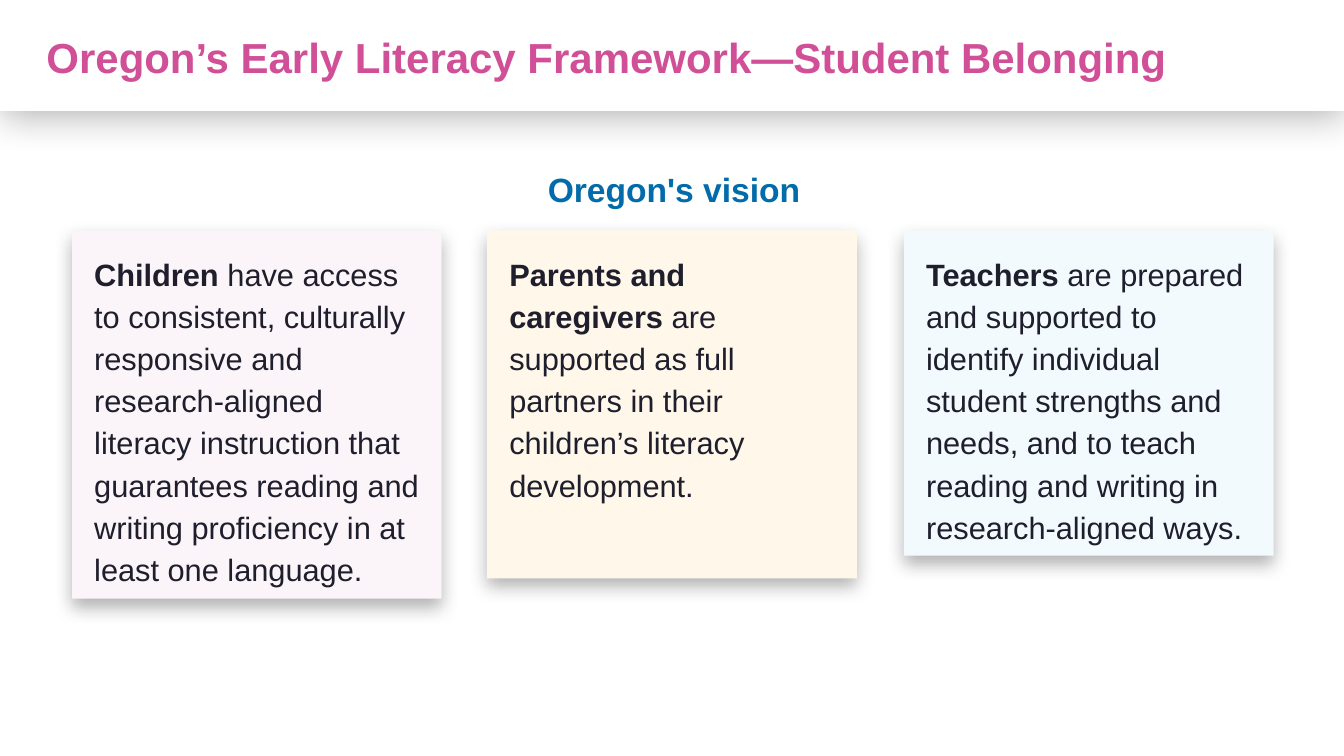
from lxml import etree
from pptx import Presentation
from pptx.dml.color import RGBColor
from pptx.enum.shapes import MSO_SHAPE as Shape
from pptx.enum.text import MSO_ANCHOR as Anchor, PP_ALIGN as Align
from pptx.oxml.ns import qn
from pptx.util import Pt

WHITE = RGBColor(0xFF, 0xFF, 0xFF)
PINK = RGBColor(0xD1, 0x4F, 0x97)
BLUE = RGBColor(0x02, 0x6C, 0xAA)
INK = RGBColor(0x1E, 0x1E, 0x2D)
PALE_PINK = RGBColor(0xFB, 0xF4, 0xF8)
PALE_YELLOW = RGBColor(0xFE, 0xF7, 0xEA)
PALE_BLUE = RGBColor(0xF3, 0xFA, 0xFE)

INSET = 14.4
LINE_SPACING = 1.14


def add_panel(left, top, width, height, fill, blur, distance):
    """Add a borderless rectangle with a soft shadow below it."""
    panel = slide.shapes.add_shape(
        Shape.RECTANGLE, Pt(left), Pt(top), Pt(width), Pt(height))
    panel.fill.solid()
    panel.fill.fore_color.rgb = fill
    panel.line.fill.background()
    panel.shadow.inherit = False
    effects = panel._element.spPr.find(qn("a:effectLst"))
    shadow = etree.SubElement(
        effects, qn("a:outerShdw"), blurRad=str(Pt(blur)), dist=str(Pt(distance)),
        dir="5400000", algn="t", rotWithShape="0")
    color = etree.SubElement(shadow, qn("a:srgbClr"), val="000000")
    etree.SubElement(color, qn("a:alpha"), val="30000")
    return panel


def write(box, runs, size, color, align=Align.LEFT, inset=INSET, anchor=Anchor.TOP):
    """Fill the first paragraph of a box with (text, bold) runs."""
    frame = box.text_frame
    frame.word_wrap = True
    frame.vertical_anchor = anchor
    frame.margin_left = frame.margin_right = Pt(inset)
    frame.margin_top = frame.margin_bottom = Pt(inset)
    para = frame.paragraphs[0]
    para.alignment = align
    for text, bold in runs:
        span = para.add_run()
        span.text = text
        span.font.name = "Arial"
        span.font.size = Pt(size)
        span.font.bold = bold
        span.font.color.rgb = color
    return para


deck = Presentation()
deck.slide_width, deck.slide_height = Pt(960), Pt(540)
slide = deck.slides.add_slide(deck.slide_layouts[5])

# Header band, placed behind the title
header = add_panel(0, 0, 960, 79.2, WHITE, 28, 3)
slide.shapes._spTree.insert(2, header._element)

# Title
title = slide.shapes.title
title.left, title.top, title.width, title.height = Pt(26), Pt(18.7), Pt(897), Pt(44)
write(title, [("Oregon’s Early Literacy Framework—Student Belonging", True)],
      30, PINK, inset=7.2, anchor=Anchor.MIDDLE)

# Subheading
subheading = slide.shapes.add_textbox(Pt(33), Pt(102.2), Pt(897), Pt(60))
vision = write(subheading, [("Oregon's vision", True)], 24, BLUE, Align.CENTER)
vision.line_spacing = LINE_SPACING

# Vision cards
cards = [
    (51.5, 263, PALE_PINK, "Children",
     " have access to consistent, culturally responsive and research-aligned "
     "literacy instruction that guarantees reading and writing proficiency "
     "in at least one language."),
    (348, 248.5, PALE_YELLOW, "Parents and caregivers",
     " are supported as full partners in their children’s literacy development."),
    (645.7, 232.3, PALE_BLUE, "Teachers",
     " are prepared and supported to identify individual student strengths and "
     "needs, and to teach reading and writing in research-aligned ways."),
]
for left, height, fill, group, promise in cards:
    card = add_panel(left, 164.6, 264, height, fill, 13, 6)
    para = write(card, [(group, True), (promise, False)], 22, INK)
    para.line_spacing = LINE_SPACING
    para._p.get_or_add_pPr().set("marL", str(Pt(1.4)))

deck.save("out.pptx")
